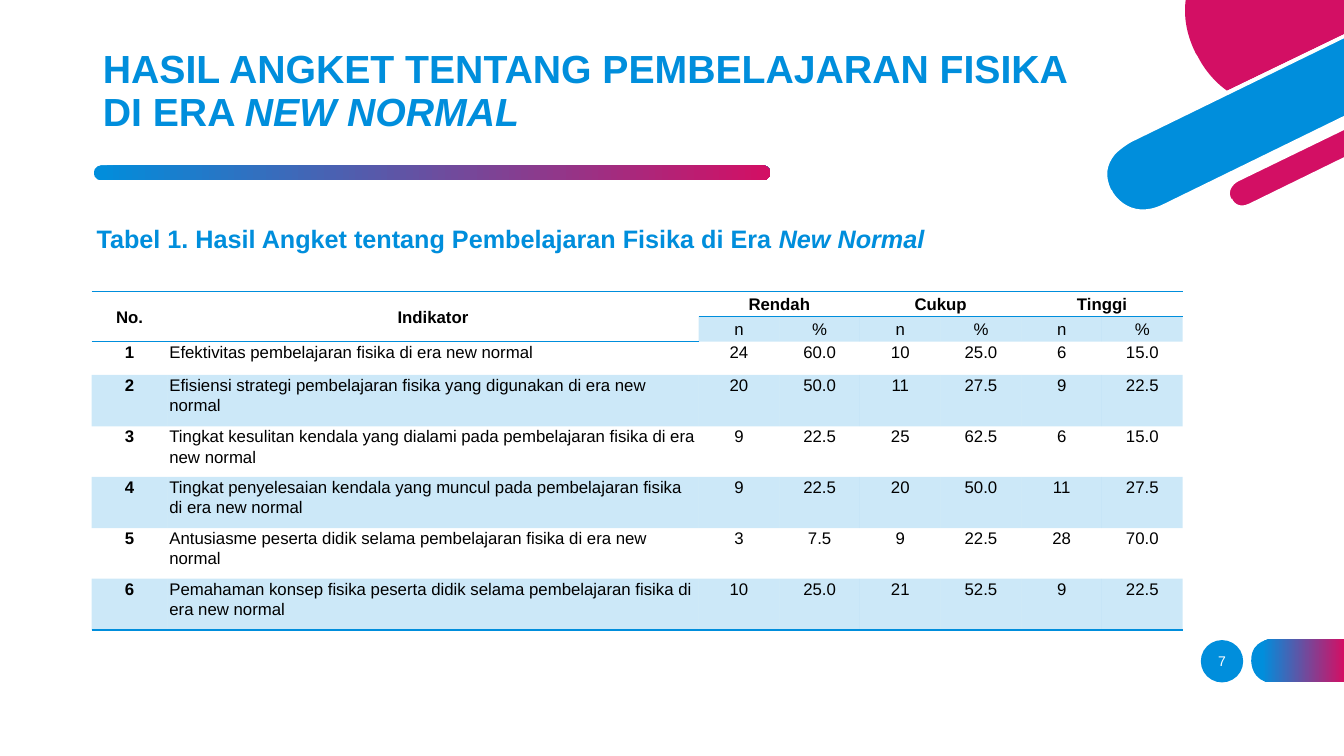
from lxml import etree
from pptx import Presentation
from pptx import util as u
from pptx.dml.color import RGBColor
from pptx.enum import shapes, text
from pptx.oxml import ns

BLUE = RGBColor(0x00, 0x8E, 0xDC)
PINK = RGBColor(0xD3, 0x0F, 0x64)
WHITE = RGBColor(0xFF, 0xFF, 0xFF)
BLACK = RGBColor(0x00, 0x00, 0x00)
FONT = "Arial"
PLAIN_TABLE_STYLE = "{2D5ABB26-0587-4C30-8999-92F81FD0307C}"
CENTER, LEFT = text.PP_ALIGN.CENTER, text.PP_ALIGN.LEFT
MIDDLE, TOP = text.MSO_ANCHOR.MIDDLE, text.MSO_ANCHOR.TOP

# Outlines in inches from the corner of their box; a segment is a point or a Bézier curve.
CORNER_OUTLINES = [
    (WHITE, [(2.4, .81), (2.13, .94), (1.81, 1.1, 1.51, 1.08, 1.26, .89),
             (1.06, .74, .96, .55, .96, .55), (.95, .52), (.86, .34, .82, .16, .85, 0),
             (.81, 0), (.78, .17, .82, .35, .91, .54), (.93, .57),
             (.93, .58, 1.03, .77, 1.23, .92), (1.35, 1.01, 1.51, 1.09, 1.72, 1.09),
             (1.84, 1.09, 1.98, 1.06, 2.15, .98), (2.4, .86)]),
    (BLUE, [(.28, 1.39), (.28, 1.39, -.08, 1.57, .08, 1.89), (.08, 1.9),
            (.08, 1.9, .24, 2.22, .61, 2.04), (2.4, 1.17), (2.4, .36)]),
    (PINK, [(.95, .56), (.95, .56, 1.04, .76, 1.24, .9), (2.4, .34), (2.4, 0), (.83, 0),
            (.81, .15, .83, .33, .93, .53)]),
    (PINK, [(2.4, 1.26), (1.34, 1.78), (1.34, 1.78, 1.2, 1.85, 1.27, 1.97), (1.27, 1.98),
            (1.27, 1.98, 1.33, 2.11, 1.47, 2.04), (2.4, 1.58)]),
    (WHITE, [(1.46, 2.02), (1.34, 2.08, 1.29, 1.98, 1.29, 1.97), (1.28, 1.97),
             (1.23, 1.86, 1.35, 1.8, 1.35, 1.8), (2.4, 1.29), (2.4, 1.24), (1.33, 1.76),
             (1.33, 1.76, 1.26, 1.8, 1.24, 1.87), (1.22, 1.91, 1.23, 1.95, 1.25, 1.99),
             (1.27, 2.03, 1.32, 2.08, 1.39, 2.08), (1.42, 2.08, 1.45, 2.08, 1.48, 2.06),
             (2.4, 1.61), (2.4, 1.56)]),
    (WHITE, [(.6, 2.03), (.26, 2.19, .1, 1.9, .1, 1.89), (.09, 1.88),
             (.03, 1.75, .04, 1.64, .13, 1.53), (.2, 1.46, .29, 1.41, .29, 1.41),
             (2.4, .38), (2.4, .34), (.27, 1.37), (.26, 1.38, .09, 1.46, .03, 1.63),
             (0, 1.71, .01, 1.8, .06, 1.9), (.06, 1.91), (.06, 1.91, .17, 2.12, .4, 2.12),
             (.46, 2.12, .53, 2.1, .61, 2.06), (2.4, 1.19), (2.4, 1.15)]),
]
PAGE_TAB = [(.21, .43), (.92, .43), (.92, 0), (.21, 0), (.21, 0, 0, 0, 0, .21),
            (0, .22), (0, .22, 0, .43, .21, .43)]

COLUMN_WIDTHS = [.75, 5.27] + [.8] * 6
ROW_HEIGHTS = [.25, .25, .33, .51, .5, .51, .5, .51]
LEVELS = ["Rendah", "Cukup", "Tinggi"]
RESULTS = [
    ("Efektivitas pembelajaran fisika di era new normal",
     "24", "60.0", "10", "25.0", "6", "15.0"),
    ("Efisiensi strategi pembelajaran fisika yang digunakan di era new normal",
     "20", "50.0", "11", "27.5", "9", "22.5"),
    ("Tingkat kesulitan kendala yang dialami pada pembelajaran fisika di era new normal",
     "9", "22.5", "25", "62.5", "6", "15.0"),
    ("Tingkat penyelesaian kendala yang muncul pada pembelajaran fisika di era new normal",
     "9", "22.5", "20", "50.0", "11", "27.5"),
    ("Antusiasme peserta didik selama pembelajaran fisika di era new normal",
     "3", "7.5", "9", "22.5", "28", "70.0"),
    ("Pemahaman konsep fisika peserta didik selama pembelajaran fisika di era new normal",
     "10", "25.0", "21", "52.5", "9", "22.5"),
]


def inches(*lengths):
    return [u.Inches(length) for length in lengths]


def fill_gradient(fill, start=0):
    fill.gradient()
    fill.gradient_angle = 0
    for stop, color, position in zip(fill.gradient_stops, (BLUE, PINK), (start, 1)):
        stop.color.rgb = color
        stop.position = position


def finish(shape, color=None):
    """Remove line and shadow, and apply a solid colour if one is given."""
    shape.shadow.inherit = False
    shape.line.fill.background()
    if color is not None:
        shape.fill.solid()
        shape.fill.fore_color.rgb = color


def add_outline(container, left, top, outline):
    """Build a closed freeform, joining each three points of a curve into one segment."""
    points = [inches(left + segment[i], top + segment[i + 1])
              for segment in outline for i in range(0, len(segment), 2)]
    builder = container.build_freeform(*points[0])
    builder.add_line_segments(points[1:], close=True)
    shape = builder.convert_to_shape()
    lines = iter(shape._element.findall(".//" + ns.qn("a:lnTo")))
    for segment in outline[1:]:
        line = next(lines)
        if len(segment) == 6:
            curve = etree.Element(ns.qn("a:cubicBezTo"))
            line.addprevious(curve)
            for part in (line, next(lines), next(lines)):
                curve.append(part[0])
                part.getparent().remove(part)
    return shape


def add_run(paragraph, words, size, color=None, bold=False, italic=False):
    run = paragraph.add_run()
    run.text = words
    font = run.font
    font.name, font.size, font.bold, font.italic = FONT, u.Pt(size), bold, italic
    if color is None:
        fill_gradient(font.fill)
    else:
        font.fill.solid()
        font.fill.fore_color.rgb = color


def add_text_box(slide, box, align):
    frame = slide.shapes.add_textbox(*inches(*box)).text_frame
    frame.word_wrap = True
    frame.vertical_anchor = MIDDLE
    frame.paragraphs[0].alignment = align
    return frame.paragraphs[0]


def add_corner(slide, left, top):
    corner = slide.shapes.add_group_shape()
    for color, outline in CORNER_OUTLINES:
        finish(add_outline(corner.shapes, left, top, outline), color)


def add_page_number(slide, left, top, number):
    disc = slide.shapes.add_shape(shapes.MSO_SHAPE.OVAL, *inches(left, top + .01, .42, .42))
    finish(disc, BLUE)
    tab = add_outline(slide.shapes, left + .5, top, PAGE_TAB)
    finish(tab)
    fill_gradient(tab.fill, .12)
    paragraph = add_text_box(slide, (left - .09, top + .02, .6, .4), CENTER)
    add_run(paragraph, number, 10, WHITE)


def add_heading(slide, left, top, width, height):
    title = slide.shapes.title
    title.left, title.top, title.width, title.height = inches(left, top, width, height)
    frame = title.text_frame
    frame.word_wrap = True
    frame.auto_size = text.MSO_AUTO_SIZE.NONE
    frame.vertical_anchor = MIDDLE
    paragraph = frame.paragraphs[0]
    paragraph.alignment, paragraph.line_spacing = LEFT, .9
    add_run(paragraph, "HASIL ANGKET TENTANG PEMBELAJARAN FISIKA DI ERA ", 28, bold=True)
    add_run(paragraph, "NEW NORMAL", 28, bold=True, italic=True)
    bar = slide.shapes.add_shape(shapes.MSO_SHAPE.ROUNDED_RECTANGLE,
                                 *inches(left + .01, top + 1.24, 6.71, .15))
    bar.adjustments[0] = .5
    finish(bar)
    fill_gradient(bar.fill)


def write_cell(cell, words, bold=False, align=CENTER, anchor=TOP):
    cell.margin_left = cell.margin_right = u.Inches(.02)
    cell.margin_top = cell.margin_bottom = 0
    cell.vertical_anchor = anchor
    paragraph = cell.text_frame.paragraphs[0]
    paragraph.alignment, paragraph.line_spacing = align, 1.07
    paragraph.space_after = u.Pt(8)
    add_run(paragraph, words, 12, BLACK, bold)


def tint_cell(cell):
    cell.fill.solid()
    cell.fill.fore_color.rgb = BLUE
    color = cell.fill._xPr.find(".//" + ns.qn("a:srgbClr"))
    etree.SubElement(color, ns.qn("a:alpha"), val="20000")


def rule_cell(cell, *sides):
    """Draw a thin blue border on the given sides, T before B."""
    properties = cell._tc.get_or_add_tcPr()
    for index, side in enumerate(sides):
        line = etree.Element(ns.qn("a:ln" + side), w=str(u.Pt(1)))
        fill = etree.SubElement(line, ns.qn("a:solidFill"))
        etree.SubElement(fill, ns.qn("a:srgbClr"), val=str(BLUE))
        properties.insert(index, line)


def add_results_table(slide, left, top):
    size = inches(left, top, sum(COLUMN_WIDTHS), sum(ROW_HEIGHTS))
    table = slide.shapes.add_table(len(ROW_HEIGHTS), len(COLUMN_WIDTHS), *size).table
    table._tbl.tblPr.find(ns.qn("a:tableStyleId")).text = PLAIN_TABLE_STYLE
    for column, width in zip(table.columns, COLUMN_WIDTHS):
        column.width = u.Inches(width)
    for row, height in zip(table.rows, ROW_HEIGHTS):
        row.height = u.Inches(height)

    for column, words in enumerate(["No.", "Indikator"]):
        table.cell(0, column).merge(table.cell(1, column))
        write_cell(table.cell(0, column), words, True, anchor=MIDDLE)
        rule_cell(table.cell(1, column), "B")
    for column, level in zip((2, 4, 6), LEVELS):
        table.cell(0, column).merge(table.cell(0, column + 1))
        write_cell(table.cell(0, column), level, True, anchor=MIDDLE)
        for offset, unit in enumerate("n%"):
            write_cell(table.cell(1, column + offset), unit, anchor=MIDDLE)
            tint_cell(table.cell(1, column + offset))
    for number, (indicator, *values) in enumerate(RESULTS, 1):
        for column, words in enumerate([str(number), indicator, *values]):
            cell = table.cell(number + 1, column)
            write_cell(cell, words, column == 0, LEFT if column == 1 else CENTER)
            if number % 2 == 0:
                tint_cell(cell)
    for column in range(len(COLUMN_WIDTHS)):
        rule_cell(table.cell(0, column), "T", "B")
        rule_cell(table.cell(len(ROW_HEIGHTS) - 1, column), "B")


def main():
    presentation = Presentation()
    presentation.slide_width, presentation.slide_height = inches(13.33, 7.5)
    slide = presentation.slides.add_slide(presentation.slide_layouts[5])
    add_corner(slide, 10.93, 0)
    add_heading(slide, .92, .4, 9.9, 1.03)
    caption = add_text_box(slide, (.86, 2.17, 9.13, .4), LEFT)
    add_run(caption, "Tabel 1. Hasil Angket tentang Pembelajaran Fisika di Era", 18, BLUE, True)
    add_run(caption, " New Normal", 18, BLUE, True, True)
    add_results_table(slide, .91, 2.89)
    add_page_number(slide, 11.91, 6.34, "7")
    presentation.save("out.pptx")


if __name__ == "__main__":
    main()
